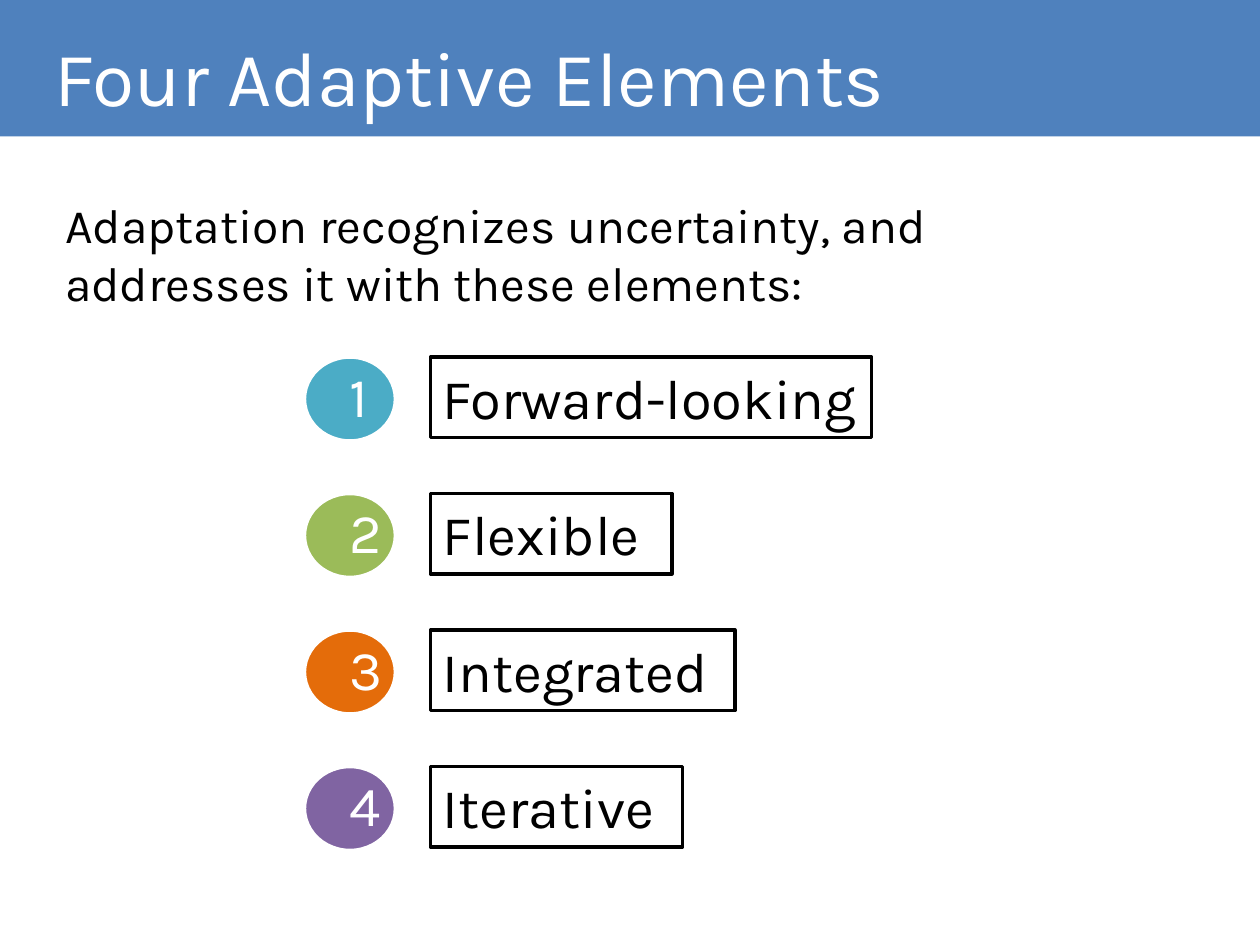
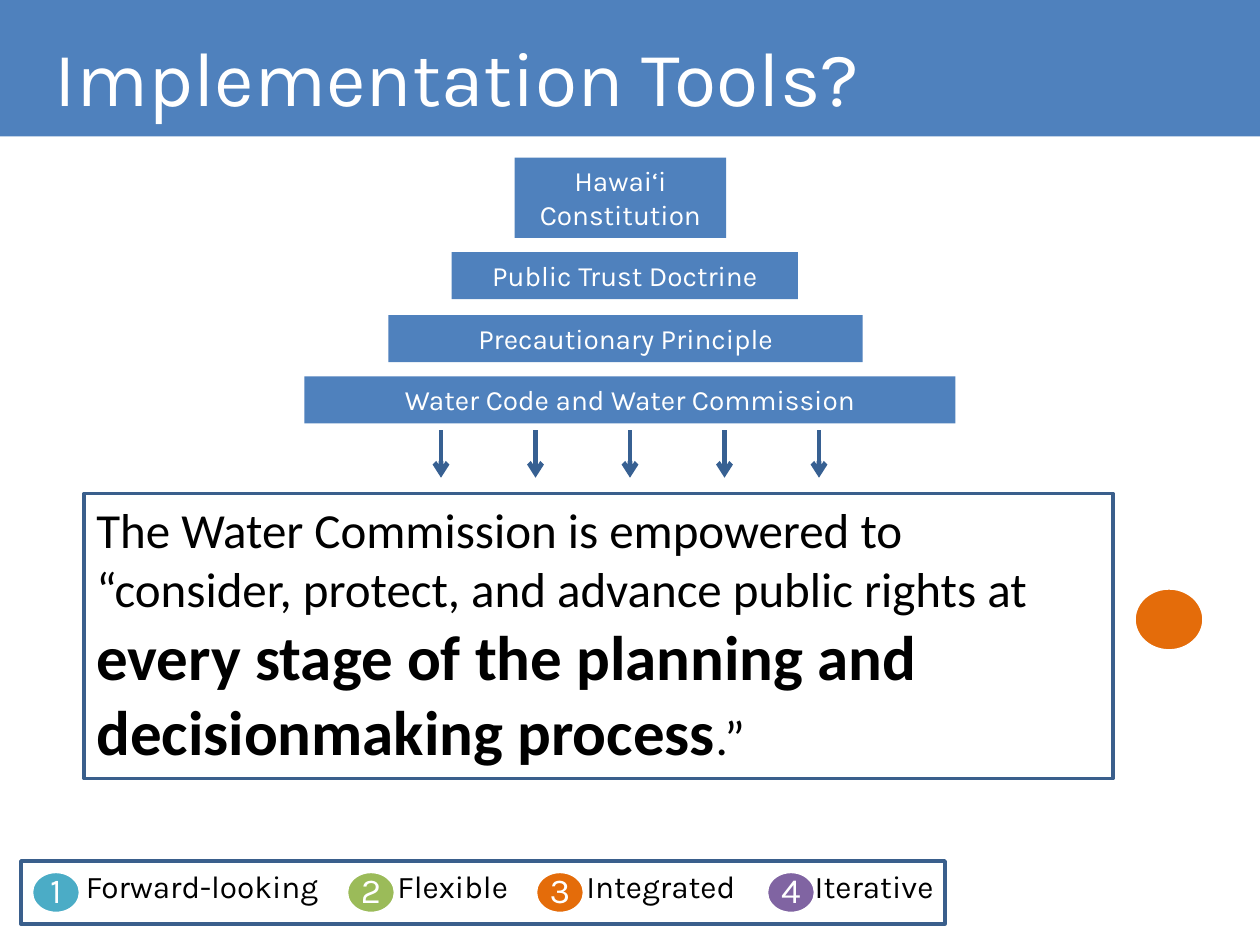
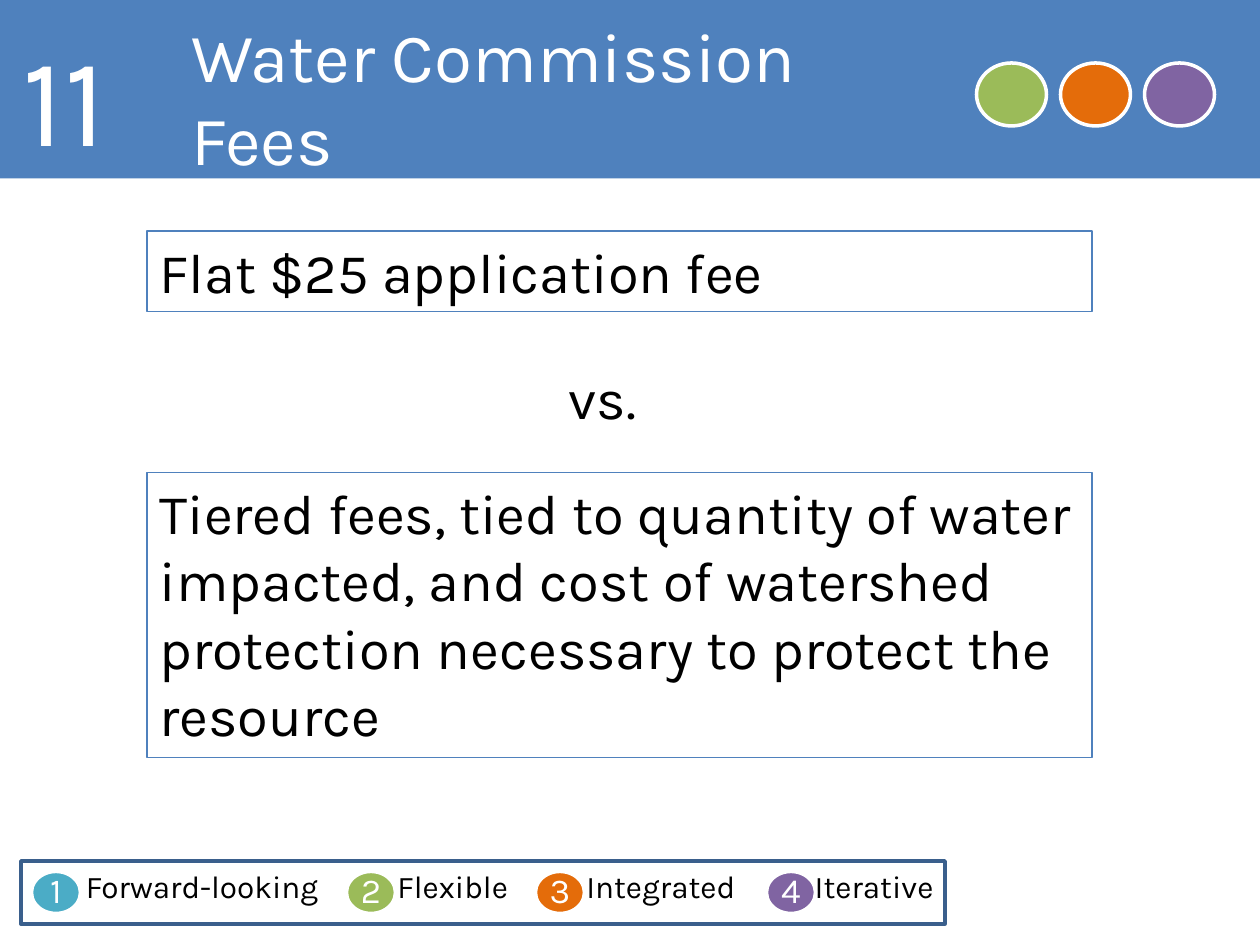
import pptx
import pptx.dml.color
import pptx.enum.shapes
import pptx.enum.text
import pptx.oxml
import pptx.oxml.ns
import pptx.util

Pt = pptx.util.Pt
RGBColor = pptx.dml.color.RGBColor
SHAPE = pptx.enum.shapes.MSO_SHAPE
ALIGN = pptx.enum.text.PP_ALIGN
ANCHOR = pptx.enum.text.MSO_ANCHOR

# Colours and fonts
WHITE = RGBColor(0xFF, 0xFF, 0xFF)
BLACK = RGBColor(0x00, 0x00, 0x00)
BLUE = RGBColor(0x4F, 0x81, 0xBD)
FRAME_BLUE = RGBColor(0x3A, 0x5F, 0x8C)
ARROW_BLUE = RGBColor(0x37, 0x60, 0x92)
TEAL = RGBColor(0x4B, 0xAC, 0xC6)
GREEN = RGBColor(0x9B, 0xBB, 0x59)
ORANGE = RGBColor(0xE4, 0x6C, 0x0A)
PURPLE = RGBColor(0x80, 0x64, 0xA2)
MAIN_FONT = "Karla"
QUOTE_FONT = "Calibri"

SLIDE_WIDTH, SLIDE_HEIGHT = 720, 540
BAND_HEIGHT = 78
TITLE_BOX = (24, 0, 612, 86)
LEGEND_BOX = (12, 492, 528, 36)
DOT_SIZE = (40, 36)

# The four adaptive elements: name and colour
ELEMENTS = [
    ("Forward-looking", TEAL),
    ("Flexible", GREEN),
    ("Integrated", ORANGE),
    ("Iterative", PURPLE),
]


def set_values(target, values):
    for name, value in values.items():
        setattr(target, name, value)


def points(box):
    return [Pt(length) for length in box]


# Text
def write_text(shape, runs, align=ALIGN.LEFT, anchor=ANCHOR.TOP, inset=None,
               color=BLACK, paragraph_format=None):
    """Fill a shape with one paragraph; each run is (text, font values)."""
    frame = shape.text_frame
    set_values(frame, {
        "word_wrap": True,
        "auto_size": pptx.enum.text.MSO_AUTO_SIZE.NONE,
        "vertical_anchor": anchor,
    })
    if inset is not None:
        sides = ("left", "top", "right", "bottom")
        set_values(frame, {f"margin_{side}": Pt(inset) for side in sides})
    paragraph = frame.paragraphs[0]
    set_values(paragraph, {"alignment": align, "space_before": Pt(0),
                           **(paragraph_format or {})})
    for text, font_values in runs:
        run = paragraph.add_run()
        run.text = text
        set_values(run.font, {"name": MAIN_FONT, **font_values})
        run.font.color.rgb = color


def add_text(shapes, box, text, size, **text_format):
    text_box = shapes.add_textbox(*points(box))
    write_text(text_box, [(text, {"size": Pt(size)})], **text_format)


# Shapes
def add_shape(shapes, kind, box, fill=None, line=None, line_width=2):
    shape = shapes.add_shape(kind, *points(box))
    shape.shadow.inherit = False
    if fill is None:
        shape.fill.background()
    else:
        shape.fill.solid()
        shape.fill.fore_color.rgb = fill
    if line is None:
        shape.line.fill.background()
    else:
        shape.line.color.rgb = line
        shape.line.width = Pt(line_width)
    return shape


def add_dot(shapes, box, color):
    add_shape(shapes, SHAPE.OVAL, box, color, WHITE)


def add_badge(shapes, box, number, color, size):
    """A coloured oval with its number on a plate in the middle."""
    left, top, width, height = box
    group = shapes.add_group_shape()
    add_dot(group.shapes, box, color)
    plate_box = (left + 0.15 * width, top + height / 4, 0.7 * width, height / 2)
    plate = add_shape(group.shapes, SHAPE.RECTANGLE, plate_box, color)
    write_text(plate, [(str(number), {"size": Pt(size)})], ALIGN.CENTER,
               ANCHOR.MIDDLE, 18, WHITE, {"line_spacing": 0.9})


def add_down_arrow(shapes, x, top, bottom):
    arrow = shapes.add_connector(pptx.enum.shapes.MSO_CONNECTOR.STRAIGHT,
                                 *points((x, top, x, bottom)))
    arrow.line.color.rgb = ARROW_BLUE
    arrow.line.width = Pt(2.75)
    line = arrow.line._get_or_add_ln()
    head = pptx.oxml.parse_xml(
        f'<a:tailEnd {pptx.oxml.ns.nsdecls("a")} type="arrow"/>')
    line.append(head)
    effects = pptx.oxml.parse_xml(
        f'<a:effectLst {pptx.oxml.ns.nsdecls("a")}/>')
    line.addnext(effects)


# Shared regions
def add_placeholder_text(placeholder, box, text, size, **text_format):
    left, top, width, height = points(box)
    set_values(placeholder, {"left": left, "top": top,
                             "width": width, "height": height})
    write_text(placeholder, [(text, {"size": Pt(size)})], **text_format)


def add_title(slide, text, band_height=BAND_HEIGHT, box=TITLE_BOX, size=44):
    title = slide.shapes.title
    band = add_shape(slide.shapes, SHAPE.RECTANGLE,
                     (0, 0, SLIDE_WIDTH, band_height), BLUE)
    title.element.addprevious(band.element)
    add_placeholder_text(title, box, text, size,
                         anchor=ANCHOR.MIDDLE, color=WHITE)


def add_legend(slide, box):
    left, top, width, height = box
    shapes = slide.shapes.add_group_shape().shapes
    add_shape(shapes, SHAPE.RECTANGLE, box, line=FRAME_BLUE)
    # Badge and label offsets from the left of the legend
    offsets = [(6, 30), (186, 208), (294, 316), (426, 446.5)]
    for number, ((name, color), (badge_x, label_x)) in enumerate(
            zip(ELEMENTS, offsets), 1):
        add_text(shapes, (left + label_x, top, 150, height), name, 18)
        add_badge(shapes, (left + badge_x, top + 6, 28, 24), number, color, 20)


# Slide 1
def add_element_list(slide, left, top):
    pitch = 78
    name_widths = [252, 138, 174, 144]
    for index, ((name, color), width) in enumerate(zip(ELEMENTS, name_widths)):
        row_top = top + index * pitch
        add_badge(slide.shapes, (left, row_top, 52, 48), index + 1, color, 32)
        name_box = add_shape(slide.shapes, SHAPE.RECTANGLE,
                             (left + 72, row_top, width, 46), line=BLACK)
        write_text(name_box, [(name, {"size": Pt(32)})])


def build_elements_slide(presentation):
    slide = presentation.slides.add_slide(presentation.slide_layouts[0])
    add_title(slide, "Four Adaptive Elements")
    add_placeholder_text(
        slide.placeholders[1], (30, 108, 546, 120),
        "Adaptation recognizes uncertainty, and addresses it with these elements:",
        27.5)
    add_element_list(slide, 174, 204)


# Slide 2
def add_authority_pyramid(slide, left, top):
    steps = [
        ("Hawai‘i Constitution", (120, 0, 121, 46)),
        ("Public Trust Doctrine", (84, 54, 198, 27)),
        ("Precautionary Principle", (48, 90, 271, 27)),
        ("Water Code and Water Commission", (0, 125, 372, 27)),
    ]
    shapes = slide.shapes.add_group_shape().shapes
    for text, (step_x, step_y, width, height) in steps:
        step = add_shape(shapes, SHAPE.RECTANGLE,
                         (left + step_x, top + step_y, width, height), BLUE)
        write_text(step, [(text, {"size": Pt(16)})], ALIGN.CENTER, color=WHITE)


def add_quote(slide, box):
    quote = add_shape(slide.shapes, SHAPE.RECTANGLE, box, line=FRAME_BLUE)
    plain = {"name": QUOTE_FONT, "size": Pt(28)}
    strong = {"name": QUOTE_FONT, "size": Pt(36), "bold": True}
    write_text(quote, [
        ("The Water Commission is empowered to “consider, protect, "
         "and advance public rights at ", plain),
        ("every stage of the planning and decisionmaking process", strong),
        (".”", plain),
    ])


def build_tools_slide(presentation):
    slide = presentation.slides.add_slide(presentation.slide_layouts[5])
    add_title(slide, "Implementation Tools?")
    add_authority_pyramid(slide, 174, 90)
    for index in range(5):
        add_down_arrow(slide.shapes, 252 + 54 * index, 246, 273)
    add_quote(slide, (48, 282, 588, 163))
    add_dot(slide.shapes, (648, 336, *DOT_SIZE), ORANGE)
    add_legend(slide, LEGEND_BOX)


# Slide 3
def add_fee_comparison(slide, left, top, width):
    fees = [
        ("Flat $25 application fee", 0, 46),
        ("Tiered fees, tied to quantity of water impacted, and cost of "
         "watershed protection necessary to protect the resource", 138, 163),
    ]
    for text, offset, height in fees:
        fee = add_shape(slide.shapes, SHAPE.RECTANGLE,
                        (left, top + offset, width, height),
                        line=BLUE, line_width=0.75)
        write_text(fee, [(text, {"size": Pt(32)})])
    add_text(slide.shapes, (left + 234, top + 72, 144, 46), "vs.", 32)


def build_fees_slide(presentation):
    slide = presentation.slides.add_slide(presentation.slide_layouts[5])
    add_title(slide, "Water Commission Fees", 102, (102, 12, 444, 86), 39.6)
    add_text(slide.shapes, (6, 12, 90, 86), "11", 72,
             anchor=ANCHOR.MIDDLE, color=WHITE)
    for index, (_, color) in enumerate(ELEMENTS[1:]):
        add_dot(slide.shapes, (558 + 48 * index, 36, *DOT_SIZE), color)
    add_fee_comparison(slide, 84, 132, 540)
    add_legend(slide, LEGEND_BOX)


def main():
    presentation = pptx.Presentation()
    set_values(presentation, {"slide_width": Pt(SLIDE_WIDTH),
                              "slide_height": Pt(SLIDE_HEIGHT)})
    build_elements_slide(presentation)
    build_tools_slide(presentation)
    build_fees_slide(presentation)
    presentation.save("out.pptx")


if __name__ == "__main__":
    main()
